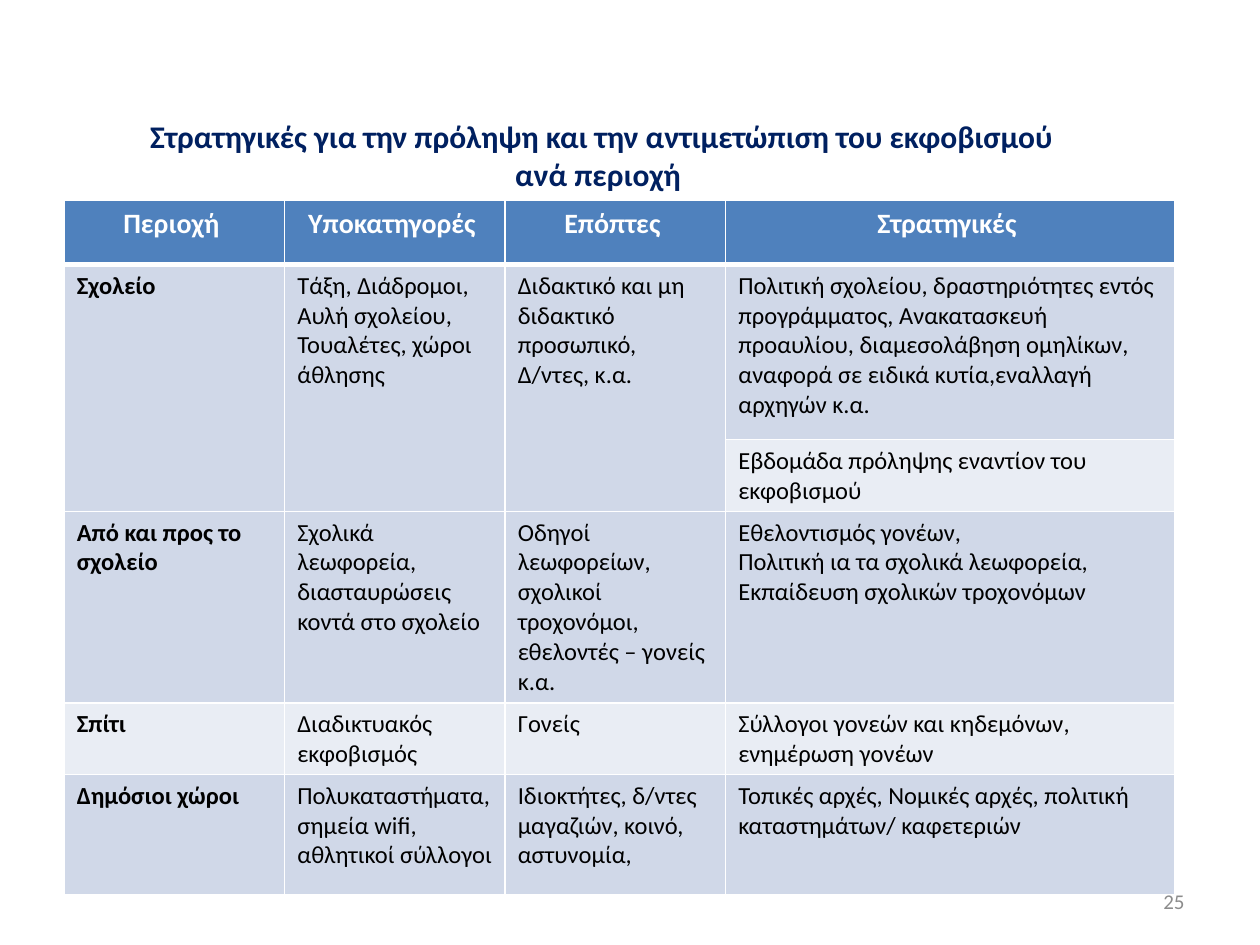
import pptx
import pptx.dml.color
import pptx.enum.text
import pptx.oxml
import pptx.oxml.ns
import pptx.util
from pptx.util import Inches

RGBColor = pptx.dml.color.RGBColor
ALIGN = pptx.enum.text.PP_ALIGN
ANCHOR = pptx.enum.text.MSO_ANCHOR

WHITE = RGBColor(0xFF, 0xFF, 0xFF)
BLACK = RGBColor(0x00, 0x00, 0x00)
NAVY = RGBColor(0x00, 0x20, 0x60)
GREY = RGBColor(0x8C, 0x8C, 0x8C)
HEADER_BLUE = RGBColor(0x4F, 0x81, 0xBD)
BAND_DARK = RGBColor(0xD0, 0xD8, 0xE8)
BAND_LIGHT = RGBColor(0xE9, 0xED, 0xF4)

TITLE = "Στρατηγικές για την πρόληψη και την αντιμετώπιση του εκφοβισμού ανά περιοχή "
COLUMN_WIDTHS = [1.75, 1.75, 1.75, 3.56]
ROW_HEIGHTS = [0.51, 1.39, 0.57, 1.52, 0.57, 0.95]
ROWS = [
    ["Περιοχή ", "Υποκατηγορές ", "Επόπτες ", "Στρατηγικές "],
    ["Σχολείο",
     "Τάξη, Διάδρομοι, Αυλή σχολείου, Τουαλέτες, χώροι άθλησης",
     "Διδακτικό και μη διδακτικό προσωπικό, Δ/ντες, κ.α.",
     "Πολιτική σχολείου, δραστηριότητες εντός προγράμματος, Ανακατασκευή "
     "προαυλίου, διαμεσολάβηση ομηλίκων, αναφορά σε ειδικά κυτία,εναλλαγή "
     "αρχηγών κ.α."],
    ["", "", "", "Εβδομάδα πρόληψης εναντίον του εκφοβισμού"],
    ["Από και προς το σχολείο",
     "Σχολικά λεωφορεία, διασταυρώσεις κοντά στο σχολείο",
     "Οδηγοί λεωφορείων, σχολικοί τροχονόμοι, εθελοντές – γονείς κ.α.",
     "Εθελοντισμός γονέων,\nΠολιτική ια τα σχολικά λεωφορεία,\n"
     "Εκπαίδευση σχολικών τροχονόμων"],
    ["Σπίτι", "Διαδικτυακός εκφοβισμός", "Γονείς",
     "Σύλλογοι γονεών και κηδεμόνων, ενημέρωση γονέων"],
    ["Δημόσιοι χώροι",
     "Πολυκαταστήματα, σημεία wifi, αθλητικοί σύλλογοι",
     "Ιδιοκτήτες, δ/ντες μαγαζιών, κοινό, αστυνομία,",
     "Τοπικές αρχές, Νομικές αρχές, πολιτική καταστημάτων/ καφετεριών"],
]
ROW_FILLS = [HEADER_BLUE, BAND_DARK, BAND_LIGHT, BAND_DARK, BAND_LIGHT, BAND_DARK]
MERGED_ROWS = (1, 2)
MERGED_COLUMNS = range(3)


def write_text(text_frame, text, size, color, bold=False, align=ALIGN.LEFT):
    text_frame.word_wrap = True
    for index, line in enumerate(text.split("\n")):
        paragraph = text_frame.add_paragraph() if index else text_frame.paragraphs[0]
        paragraph.alignment = align
        run = paragraph.add_run()
        run.text = line
        run.font.name = "Calibri"
        run.font.size = pptx.util.Pt(size)
        run.font.bold = bold
        run.font.color.rgb = color


def set_borders(cell, **widths):
    """Draw white borders; widths maps sides L, R, T and B to points."""
    properties = cell._tc.get_or_add_tcPr()
    for side, width in widths.items():
        properties.append(pptx.oxml.parse_xml(
            f'<a:ln{side} {pptx.oxml.ns.nsdecls("a")} w="{pptx.util.Pt(width)}">'
            f'<a:solidFill><a:srgbClr val="{WHITE}"/></a:solidFill></a:ln{side}>'))


def place_title(slide, left, top, width, height):
    title = slide.shapes.title
    title.left, title.top, title.width, title.height = left, top, width, height
    title.text_frame.vertical_anchor = ANCHOR.TOP
    title.text_frame.auto_size = pptx.enum.text.MSO_AUTO_SIZE.SHAPE_TO_FIT_TEXT
    write_text(title.text_frame, TITLE, 18, NAVY, bold=True, align=ALIGN.CENTER)


def add_strategy_table(slide, left, top, width, height):
    table = slide.shapes.add_table(
        len(ROWS), len(COLUMN_WIDTHS), left, top, width, height).table
    for column, column_width in zip(table.columns, COLUMN_WIDTHS):
        column.width = Inches(column_width)
    for row, row_height in zip(table.rows, ROW_HEIGHTS):
        row.height = Inches(row_height)
    for column_index in MERGED_COLUMNS:
        first, last = (table.cell(row, column_index) for row in MERGED_ROWS)
        first.merge(last)

    for row_index, texts in enumerate(ROWS):
        header = row_index == 0
        for column_index, text in enumerate(texts):
            cell = table.cell(row_index, column_index)
            set_borders(cell, L=1, R=1, T=3 if row_index == 1 else 1,
                        B=3 if header else 1)
            cell.fill.solid()
            cell.fill.fore_color.rgb = (
                BAND_DARK if cell.is_spanned else ROW_FILLS[row_index])
            if text:
                write_text(cell.text_frame, text,
                           size=16 if header else 14,
                           color=WHITE if header else BLACK,
                           bold=header or column_index == 0,
                           align=ALIGN.CENTER if header else ALIGN.LEFT)


def add_page_number(slide, left, top, width, height):
    box = slide.shapes.add_textbox(left, top, width, height)
    box.text_frame.vertical_anchor = ANCHOR.MIDDLE
    write_text(box.text_frame, "25", 12, GREY, align=ALIGN.RIGHT)


def main():
    presentation = pptx.Presentation()
    presentation.slide_width = Inches(10)
    presentation.slide_height = Inches(7.5)
    slide = presentation.slides.add_slide(presentation.slide_layouts[5])
    add_strategy_table(slide, Inches(0.51), Inches(1.59),
                       Inches(sum(COLUMN_WIDTHS)), Inches(sum(ROW_HEIGHTS)))
    add_page_number(slide, Inches(7.17), Inches(6.95), Inches(2.33), Inches(0.4))
    place_title(slide, Inches(1.06), Inches(0.88), Inches(7.43), Inches(0.71))
    presentation.save("out.pptx")


if __name__ == "__main__":
    main()
